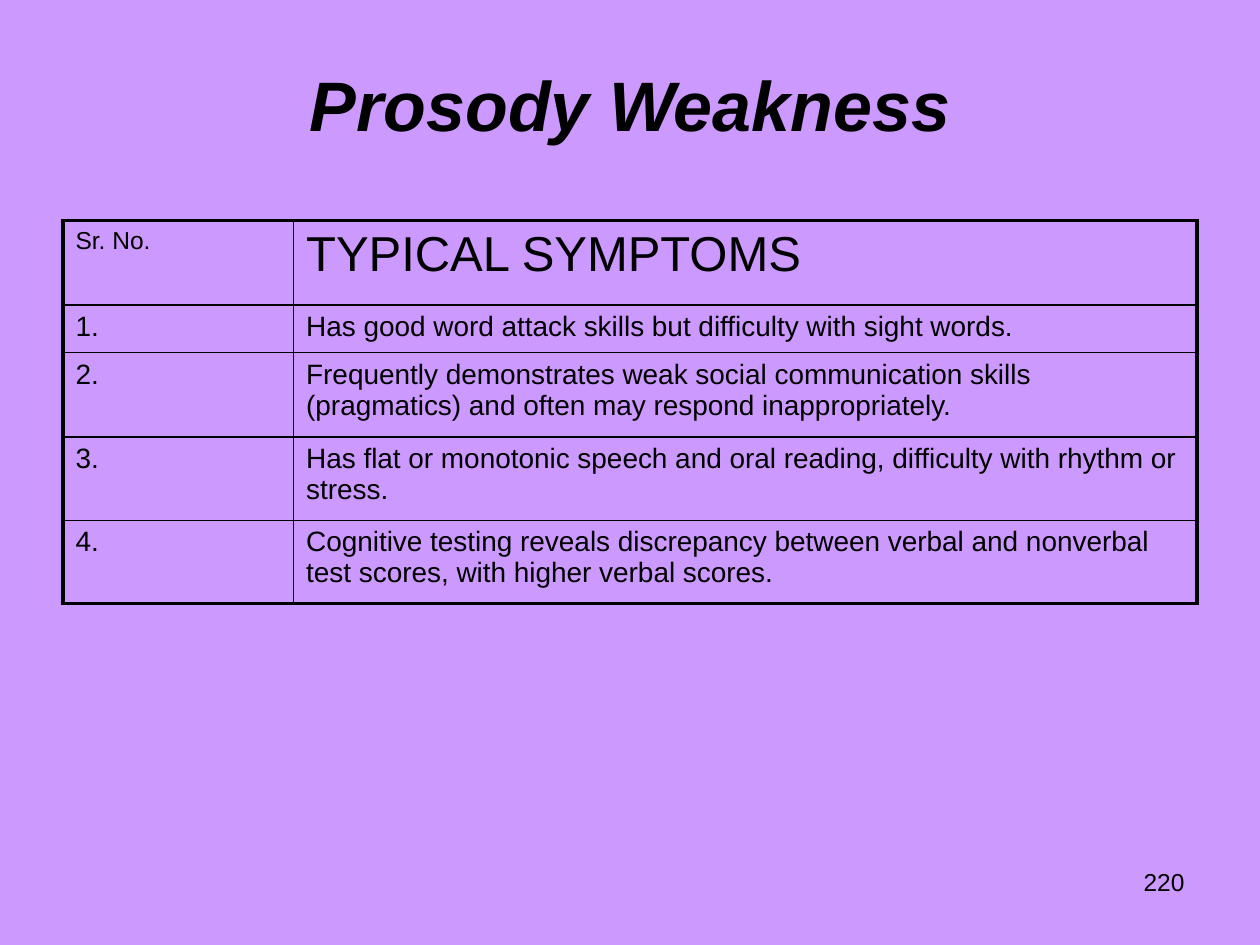
from lxml import etree
from pptx import Presentation, util as u
from pptx.dml.color import RGBColor
from pptx.enum import text
from pptx.oxml import ns

COLORS = {"background": "CC99FF", "ink": "000000"}
FONT = "Arial"
COLUMN_WIDTHS = (1.83, 7.17)
ROW_HEIGHTS = (0.67, 0.38, 0.67, 0.66, 0.66)
OUTER_LINE, INNER_LINE = 2.25, 1
SYMPTOMS = (
    "Has good word attack skills but difficulty with sight words.",
    "Frequently demonstrates weak social communication skills (pragmatics) "
    "and often may respond inappropriately.",
    "Has flat or monotonic speech and oral reading, difficulty with rhythm or stress.",
    "Cognitive testing reveals discrepancy between verbal and nonverbal test scores, "
    "with higher verbal scores.",
)


def write(frame, words, size, align=text.PP_ALIGN.LEFT, emphasis=False):
    """Put one formatted run in the first paragraph of a text frame."""
    paragraph = frame.paragraphs[0]
    paragraph.alignment = align
    run = paragraph.add_run()
    run.text = words
    run.font.name, run.font.size = FONT, u.Pt(size)
    run.font.bold = run.font.italic = emphasis
    run.font.color.rgb = RGBColor.from_string(COLORS["ink"])


def set_borders(cell, widths):
    """Draw the cell's borders from a side-to-points mapping."""
    properties = cell._tc.get_or_add_tcPr()
    for side, width in widths.items():
        line = etree.SubElement(properties, ns.qn(f"a:ln{side}"), w=str(u.Pt(width)))
        fill = etree.SubElement(line, ns.qn("a:solidFill"))
        etree.SubElement(fill, ns.qn("a:srgbClr"), val=COLORS["ink"])


def add_heading(slide, left, top, width, height):
    """Place the slide title in the given box."""
    title = slide.shapes.title
    title.left, title.top, title.width, title.height = left, top, width, height
    title.text_frame.vertical_anchor = text.MSO_ANCHOR.MIDDLE
    write(title.text_frame, "Prosody Weakness", 40, text.PP_ALIGN.CENTER, True)


def add_symptoms(slide, left, top, width, height):
    """Place the table of numbered symptoms in the given box."""
    rows = [("Sr. No.", "TYPICAL SYMPTOMS")]
    rows += [(f"{number}.", symptom) for number, symptom in enumerate(SYMPTOMS, 1)]
    last_row, last_column = len(rows) - 1, len(COLUMN_WIDTHS) - 1
    table = slide.shapes.add_table(
        len(rows), len(COLUMN_WIDTHS), left, top, width, height).table
    table.first_row = table.horz_banding = False
    for column, column_width in zip(table.columns, COLUMN_WIDTHS):
        column.width = u.Inches(column_width)
    for r, (row, row_height) in enumerate(zip(rows, ROW_HEIGHTS)):
        table.rows[r].height = u.Inches(row_height)
        for c, words in enumerate(row):
            cell = table.cell(r, c)
            edges = {"L": c == 0, "R": c == last_column, "T": r == 0, "B": r == last_row}
            set_borders(cell, {side: OUTER_LINE if outer else INNER_LINE
                               for side, outer in edges.items()})
            cell.fill.background()
            write(cell.text_frame, words, 16 if r else (14, 28)[c])


def add_page_number(slide, left, top, width, height):
    """Place the page number in the given box."""
    frame = slide.shapes.add_textbox(left, top, width, height).text_frame
    frame.word_wrap = True
    write(frame, "220", 14, text.PP_ALIGN.RIGHT)


def main():
    """Build and save the slide."""
    deck = Presentation()
    deck.slide_width, deck.slide_height = u.Inches(10), u.Inches(7.5)
    slide = deck.slides.add_slide(deck.slide_layouts[5])
    slide.background.fill.solid()
    slide.background.fill.fore_color.rgb = RGBColor.from_string(COLORS["background"])
    add_heading(slide, u.Inches(0.5), u.Inches(0.43), u.Inches(9), u.Inches(0.78))
    add_symptoms(slide, u.Inches(0.5), u.Inches(1.75), u.Inches(9), u.Inches(3.04))
    add_page_number(slide, u.Inches(7.17), u.Inches(6.83), u.Inches(2.33), u.Inches(0.52))
    deck.save("out.pptx")


if __name__ == "__main__":
    main()
